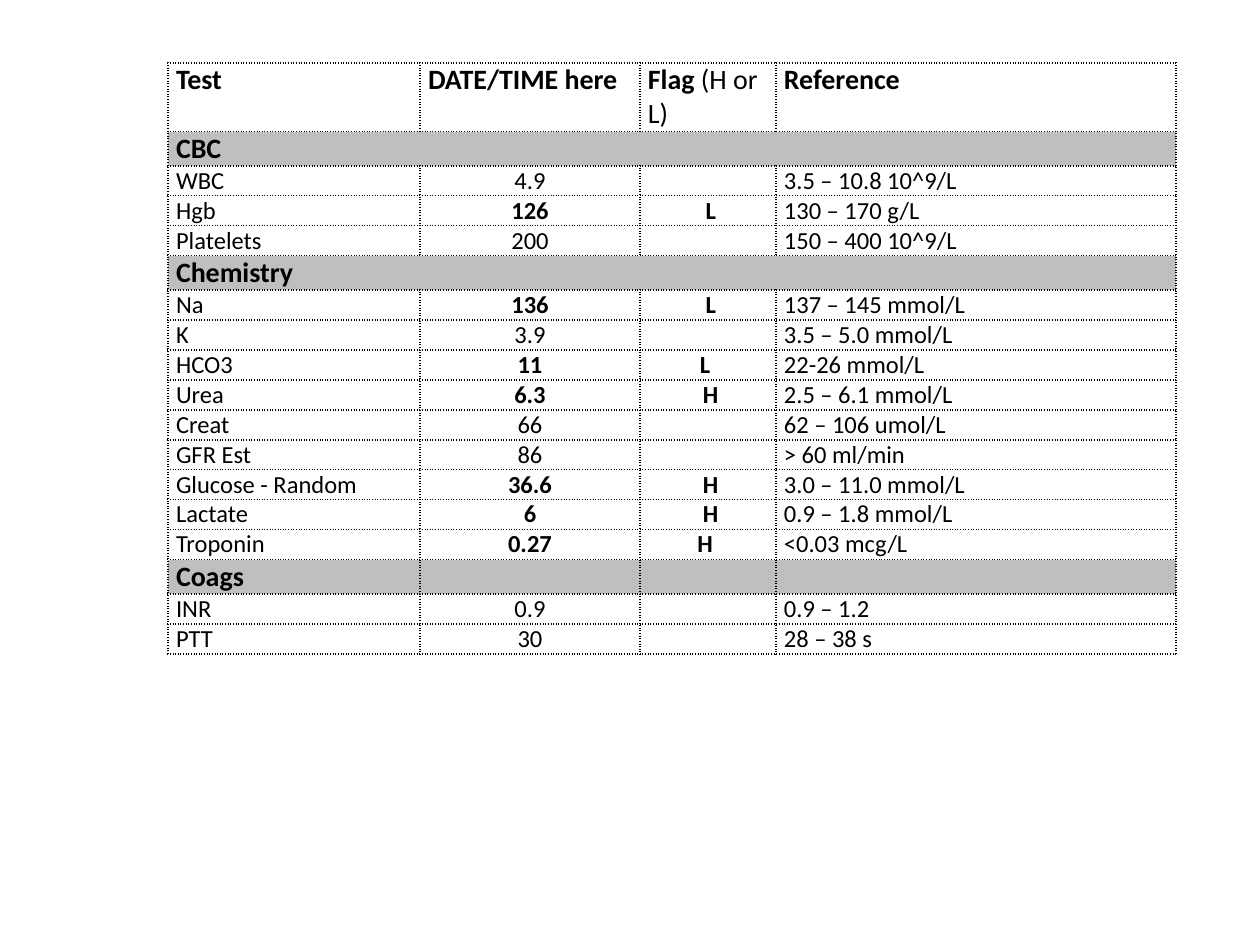
"""Build a slide with a table of laboratory results."""
import dataclasses

import lxml.etree
import pptx
import pptx.dml.color
import pptx.enum.text
import pptx.oxml.ns
import pptx.util

SCALE = 914400 / 126
COLUMN_WIDTHS = (252, 220, 136, 400)
HEADER = ("Test", "DATE/TIME here", "Flag ", "Reference")
FLAG_NOTE = "(H or L)"
SECTIONS = (
    ("CBC", True, (
        ("WBC", "4.9", "", "3.5 – 10.8 10^9/L"),
        ("Hgb", "126", " L", "130 – 170 g/L"),
        ("Platelets", "200", "", "150 – 400 10^9/L"),
    )),
    ("Chemistry", True, (
        ("Na", "136", " L", "137 – 145 mmol/L"),
        ("K", "3.9", "", "3.5 – 5.0 mmol/L"),
        ("HCO3", "11", "L ", "22-26 mmol/L"),
        ("Urea", "6.3", " H", "2.5 – 6.1 mmol/L"),
        ("Creat", "66", "", "62 – 106 umol/L"),
        ("GFR Est", "86", "", "> 60 ml/min"),
        ("Glucose - Random", "36.6", " H", "3.0 – 11.0 mmol/L"),
        ("Lactate", "6", " H", "0.9 – 1.8 mmol/L"),
        ("Troponin", "0.27", "H ", "<0.03 mcg/L"),
    )),
    ("Coags", False, (
        ("INR", "0.9", "", "0.9 – 1.2"),
        ("PTT", "30", "", "28 – 38 s"),
    )),
)


@dataclasses.dataclass(frozen=True)
class Theme:
    font: str = "Calibri"
    ink: str = "000000"
    header_fill: str = "FFFFFF"
    section_fill: str = "BFBFBF"
    heading_size: int = 16
    body_size: int = 14
    border_width: int = 1


THEME = Theme()


def px(length):
    return pptx.util.Emu(round(length * SCALE))


def rgb(value):
    return pptx.dml.color.RGBColor.from_string(value)


def apply_format(target, values):
    for name, value in values.items():
        setattr(target, name, value)


def add_child(parent, tag, **attributes):
    return lxml.etree.SubElement(parent, pptx.oxml.ns.qn(tag), **attributes)


def add_borders(cell):
    properties = cell._tc.get_or_add_tcPr()
    width = str(pptx.util.Pt(THEME.border_width))
    for side in ("a:lnL", "a:lnR", "a:lnT", "a:lnB"):
        line = add_child(properties, side, w=width)
        add_child(add_child(line, "a:solidFill"), "a:srgbClr", val=THEME.ink)
        add_child(line, "a:prstDash", val="sysDot")


def add_run(paragraph, text, size, bold):
    run = paragraph.add_run()
    run.text = text
    apply_format(run.font, {"name": THEME.font, "size": pptx.util.Pt(size), "bold": bold})
    run.font.color.rgb = rgb(THEME.ink)


def fill_cell(cell, text, size, bold=False, centered=False, fill=None):
    apply_format(cell, {"margin_left": px(8), "margin_right": px(8),
                        "margin_top": 0, "margin_bottom": 0})
    add_borders(cell)
    if fill:
        cell.fill.solid()
        cell.fill.fore_color.rgb = rgb(fill)
    else:
        cell.fill.background()
    paragraph = cell.text_frame.paragraphs[0]
    if centered:
        paragraph.alignment = pptx.enum.text.PP_ALIGN.CENTER
    if text:
        add_run(paragraph, text, size, bold)
    else:
        add_child(paragraph._p, "a:endParaRPr", sz=str(size * 100))


def fill_header(row):
    row.height = px(68)
    for cell, text in zip(row.cells, HEADER):
        fill_cell(cell, text, THEME.heading_size, bold=True, fill=THEME.header_fill)
    add_run(row.cells[2].text_frame.paragraphs[0], FLAG_NOTE, THEME.heading_size, False)


def fill_section(row, name, merged):
    row.height = px(34)
    cells = list(row.cells)
    for cell, text in zip(cells, (name, "", "", "")):
        fill_cell(cell, text, THEME.heading_size, bold=True, fill=THEME.section_fill)
    if merged:
        cells[0].merge(cells[-1])


def fill_result(row, values):
    row.height = px(30)
    flagged = bool(values[2])
    for column, (cell, text) in enumerate(zip(row.cells, values)):
        measured = column in (1, 2)
        fill_cell(cell, text, THEME.body_size, bold=measured and flagged, centered=measured)


def add_results_table(slide):
    row_count = 1 + sum(1 + len(results) for _, _, results in SECTIONS)
    shape = slide.shapes.add_table(row_count, len(COLUMN_WIDTHS), px(168), px(63),
                                   px(sum(COLUMN_WIDTHS)), px(590))
    table = shape.table
    apply_format(table, {"first_row": False, "horz_banding": False})
    for column, width in zip(table.columns, COLUMN_WIDTHS):
        column.width = px(width)
    rows = iter(table.rows)
    fill_header(next(rows))
    for name, merged, results in SECTIONS:
        fill_section(next(rows), name, merged)
        for values in results:
            fill_result(next(rows), values)


def main():
    presentation = pptx.Presentation()
    apply_format(presentation, {"slide_width": px(1260), "slide_height": px(945)})
    slide = presentation.slides.add_slide(presentation.slide_layouts[6])
    add_results_table(slide)
    presentation.save("out.pptx")


if __name__ == "__main__":
    main()
